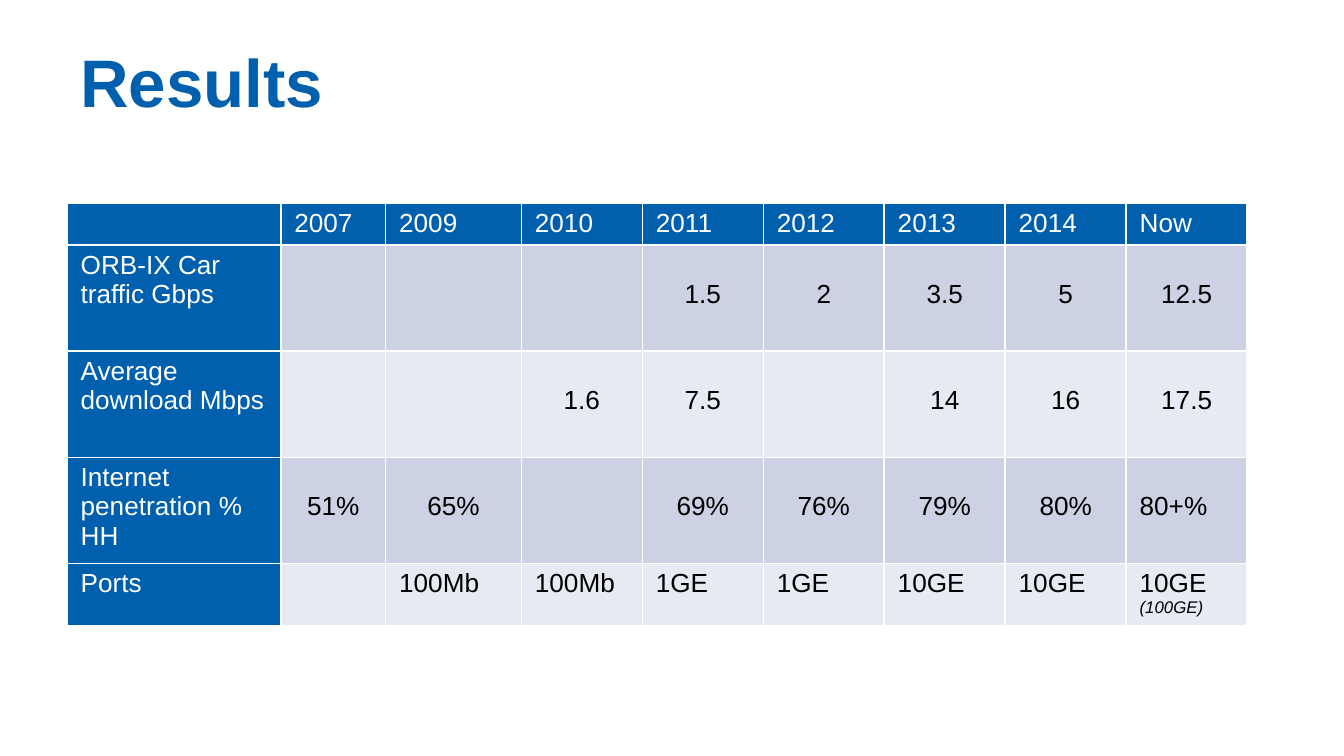
import pptx
import pptx.util
import pptx.dml.color
import pptx.enum.text
import pptx.oxml.ns
from lxml import etree

Inches, Pt = pptx.util.Inches, pptx.util.Pt
qn = pptx.oxml.ns.qn
ALIGN = pptx.enum.text.PP_ALIGN

HEX = {"blue": "0060AE", "white": "FFFFFF", "black": "000000",
       "dark": "CCD2E3", "light": "E7EAF2"}
FONT = "Arial"
WIDE = 10
TALL = WIDE * 9 / 16
TITLE = "Results"
ROWS = [
    ["", "2007", "2009", "2010", "2011", "2012", "2013", "2014", "Now"],
    ["ORB-IX Car traffic Gbps", "", "", "", "1.5", "2", "3.5", "5", "12.5"],
    ["Average download Mbps", "", "", "1.6", "7.5", "", "14", "16", "17.5"],
    ["Internet penetration % HH", "51%", "65%", "", "69%", "76%", "79%",
     "80%", "80+%"],
    ["Ports", "", "100Mb", "100Mb", "1GE", "1GE", "10GE", "10GE",
     "10GE\n(100GE)"],
]
WIDTHS = [1.59, 0.78, 1.01] + [0.9] * 6
HEIGHTS = [0.31, 0.79, 0.79, 0.79, 0.46]
FIGURES = (1, 2, 3)  # rows whose values sit one line down, centred
LEFT_SET = "80+%"
PAD, DROP = 0.04, 0.26


def color(name):
    return pptx.dml.color.RGBColor.from_string(HEX[name])


def style(font, **look):
    look = {"name": FONT, "size": Pt(14), "bold": False} | look
    font.color.rgb = color(look.pop("color"))
    for key, value in look.items():
        setattr(font, key, value)


def edge(cell):
    """Draw white lines on all sides; they must come before the fill."""
    props = cell._tc.get_or_add_tcPr()
    for side in ("lnL", "lnR", "lnT", "lnB"):
        line = etree.SubElement(props, qn("a:" + side), w=str(Pt(1)))
        solid = etree.SubElement(line, qn("a:solidFill"))
        etree.SubElement(solid, qn("a:srgbClr"), val=HEX["white"])


def write(cell, text, ink, align):
    frame = cell.text_frame
    for i, line in enumerate(text.split("\n")):
        para = frame.add_paragraph() if i else frame.paragraphs[0]
        para.alignment = align
        if line:
            run = para.add_run()
            run.text = line
            look = {"size": Pt(9), "italic": True} if i else {}
            style(run.font, color=ink, **look)
        else:
            # keeps an empty cell from stretching its row
            etree.SubElement(para._p, qn("a:endParaRPr"), sz="1400")


def add_title(slide):
    box = slide.shapes.add_textbox(Inches(0.5), Inches(0.25),
                                   Inches(9), Inches(0.94))
    frame = box.text_frame
    frame.word_wrap = True
    run = frame.paragraphs[0].add_run()
    run.text = TITLE
    style(run.font, color="blue", size=Pt(36), bold=True)


def add_grid(slide):
    table = slide.shapes.add_table(
        len(ROWS), len(WIDTHS), Inches(0.5), Inches(1.51),
        Inches(sum(WIDTHS)), Inches(sum(HEIGHTS))).table
    for col, width in zip(table.columns, WIDTHS):
        col.width = Inches(width)
    for row, height in zip(table.rows, HEIGHTS):
        row.height = Inches(height)
    for r, texts in enumerate(ROWS):
        for c, text in enumerate(texts):
            cell = table.cell(r, c)
            head = r == 0 or c == 0
            figure = r in FIGURES and c > 0 and text
            edge(cell)
            cell.fill.solid()
            band = "dark" if r % 2 else "light"
            cell.fill.fore_color.rgb = color("blue" if head else band)
            cell.margin_left = cell.margin_right = Inches(0.1)
            cell.margin_top = Inches(DROP if figure else PAD)
            cell.margin_bottom = Inches(PAD)
            mid = figure and text != LEFT_SET
            write(cell, text, "white" if head else "black",
                  ALIGN.CENTER if mid else ALIGN.LEFT)


def main():
    deck = pptx.Presentation()
    deck.slide_width, deck.slide_height = Inches(WIDE), Inches(TALL)
    slide = deck.slides.add_slide(deck.slide_layouts[6])
    add_title(slide)
    add_grid(slide)
    deck.save("out.pptx")


if __name__ == "__main__":
    main()
